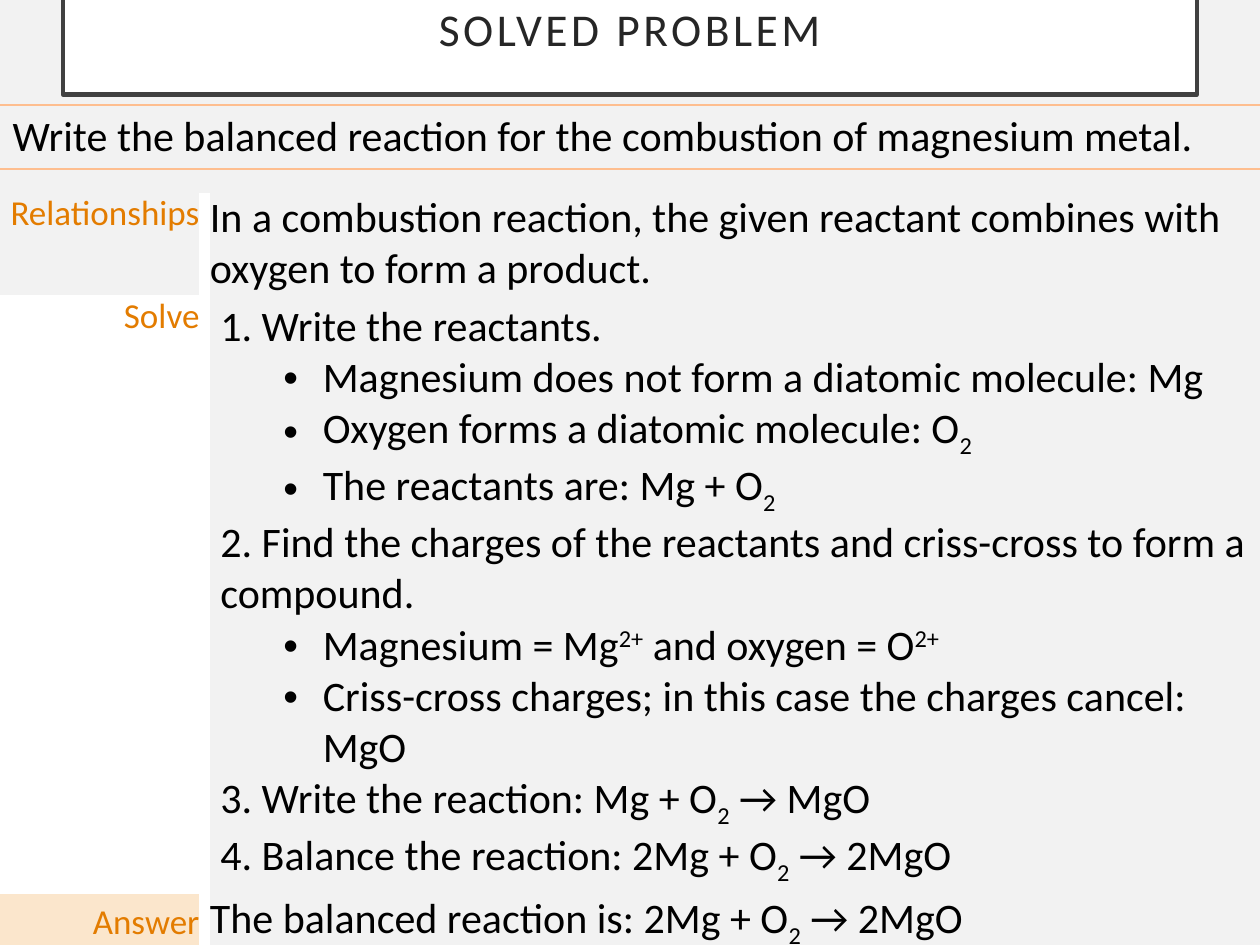
from dataclasses import dataclass
from typing import Optional

from lxml import etree
from pptx import Presentation
from pptx.dml.color import RGBColor
from pptx.enum.text import MSO_ANCHOR, PP_ALIGN
from pptx.oxml.ns import qn
from pptx.util import Pt

LEFT, CENTER, RIGHT = PP_ALIGN.LEFT, PP_ALIGN.CENTER, PP_ALIGN.RIGHT
TOP, MIDDLE = MSO_ANCHOR.TOP, MSO_ANCHOR.MIDDLE

BLACK = RGBColor(0x00, 0x00, 0x00)
WHITE = RGBColor(0xFF, 0xFF, 0xFF)
PALE_GRAY = RGBColor(0xF2, 0xF2, 0xF2)
TITLE_GRAY = RGBColor(0x26, 0x26, 0x26)
FRAME_GRAY = RGBColor(0x40, 0x40, 0x40)
ORANGE = RGBColor(0xE3, 0x7C, 0x00)
RULE_ORANGE = RGBColor(0xFE, 0xBE, 0x8F)
PEACH = RGBColor(0xFB, 0xE6, 0xCC)

FONT = "Calibri"
SUBSCRIPT, SUPERSCRIPT = -25000, 30000
NUMBER, BULLET = "number", "bullet"
NO_MARGINS = (0, 0, 0, 0)


@dataclass(frozen=True)
class Run:
    text: str
    baseline: int = 0


@dataclass(frozen=True)
class Line:
    runs: tuple
    marker: Optional[str] = None


@dataclass(frozen=True)
class Section:
    label: str
    lines: tuple
    height: float
    label_fill: Optional[RGBColor] = None
    margins: tuple = NO_MARGINS
    anchor: MSO_ANCHOR = TOP


SUB_TWO = Run("2", SUBSCRIPT)
SUPER_CHARGE = Run("2+", SUPERSCRIPT)


def line(*parts, marker=None) -> Line:
    runs = tuple(part if isinstance(part, Run) else Run(part) for part in parts)
    return Line(runs, marker)


STEPS = (
    line(" Write the reactants.", marker=NUMBER),
    line("Magnesium does not form a diatomic molecule: Mg", marker=BULLET),
    line("Oxygen forms a diatomic molecule: O", SUB_TWO, marker=BULLET),
    line("The reactants are: Mg + O", SUB_TWO, marker=BULLET),
    line(" Find the charges of the reactants and criss-cross to form a compound.", marker=NUMBER),
    line("Magnesium = Mg", SUPER_CHARGE, " and oxygen = O", SUPER_CHARGE, marker=BULLET),
    line("Criss-cross charges; in this case the charges cancel: MgO", marker=BULLET),
    line(" Write the reaction: Mg + O", SUB_TWO, " → MgO", marker=NUMBER),
    line(" Balance the reaction: 2Mg + O", SUB_TWO, " → 2MgO", marker=NUMBER),
)

SECTIONS = (
    Section("Relationships", (line(
        "In a combustion reaction, the given reactant combines with oxygen to form a product."),), 58),
    Section("Solve", STEPS, 337, WHITE, (6, 3.6, 7.2, 3.6)),
    Section("Answer", (line("The balanced reaction is: 2Mg + O", SUB_TWO, " → 2MgO"),),
            29, PEACH, anchor=MIDDLE),
)


def add_marker(paragraph, marker: str) -> None:
    properties = paragraph._p.get_or_add_pPr()
    if marker == NUMBER:
        properties.set("marL", "0")
        properties.set("indent", "0")
        etree.SubElement(properties, qn("a:buFont"), typeface="+mj-lt")
        etree.SubElement(properties, qn("a:buAutoNum"), type="arabicPeriod")
    else:
        paragraph.level = 1
        properties.set("marL", str(Pt(58.5)))
        properties.set("indent", str(-Pt(22.5)))
        etree.SubElement(properties, qn("a:buFont"), typeface="Arial")
        etree.SubElement(properties, qn("a:buChar"), char="•")


def write_text(frame, lines, *, size: float, color: RGBColor, align=LEFT, anchor=TOP,
               margins=NO_MARGINS, line_spacing: Optional[float] = None, tracking: float = 0) -> None:
    frame.word_wrap = True
    frame.vertical_anchor = anchor
    frame.margin_left, frame.margin_top, frame.margin_right, frame.margin_bottom = map(Pt, margins)
    for index, content in enumerate(lines):
        paragraph = frame.add_paragraph() if index else frame.paragraphs[0]
        paragraph.alignment = align
        if line_spacing:
            paragraph.line_spacing = line_spacing
        if content.marker:
            add_marker(paragraph, content.marker)
        for part in content.runs:
            run = paragraph.add_run()
            run.text = part.text
            run.font.name = FONT
            run.font.size = Pt(size)
            run.font.color.rgb = color
            properties = run._r.get_or_add_rPr()
            if part.baseline:
                properties.set("baseline", str(part.baseline))
            if tracking:
                properties.set("spc", str(int(tracking * 100)))


def style_cell(cell, fill: Optional[RGBColor] = None, rule: Optional[RGBColor] = None) -> None:
    if fill is None:
        cell.fill.background()
    else:
        cell.fill.solid()
        cell.fill.fore_color.rgb = fill
    properties = cell._tc.get_or_add_tcPr()
    for index, side in enumerate("LRTB"):
        border = etree.Element(qn(f"a:ln{side}"))
        if rule is not None and side in "TB":
            border.set("w", str(Pt(1.5)))
            solid = etree.SubElement(border, qn("a:solidFill"))
            etree.SubElement(solid, qn("a:srgbClr"), val=str(rule))
        else:
            etree.SubElement(border, qn("a:noFill"))
        properties.insert(index, border)


def add_plain_table(slide, top: float, widths, heights):
    frame = slide.shapes.add_table(len(heights), len(widths), Pt(0), Pt(top),
                                   Pt(sum(widths)), Pt(sum(heights)))
    table = frame.table
    table.first_row = False
    table.horz_banding = False
    for column, width in zip(table.columns, widths):
        column.width = Pt(width)
    for row, height in zip(table.rows, heights):
        row.height = Pt(height)
    return table


def add_title(slide) -> None:
    title = slide.shapes.title
    title.left, title.top, title.width, title.height = Pt(36), Pt(-18), Pt(648), Pt(72)
    title.fill.solid()
    title.fill.fore_color.rgb = WHITE
    title.line.color.rgb = FRAME_GRAY
    title.line.width = Pt(2.5)
    write_text(title.text_frame, [line("SOLVED PROBLEM")], size=26, color=TITLE_GRAY, align=CENTER,
               anchor=MIDDLE, margins=(14.4,) * 4, line_spacing=0.9, tracking=2)


def add_question(slide) -> None:
    cell = add_plain_table(slide, 60, [720], [36.5]).cell(0, 0)
    style_cell(cell, rule=RULE_ORANGE)
    write_text(cell.text_frame, [line("Write the balanced reaction for the combustion of magnesium metal.")],
               size=24, color=BLACK)
    cell.vertical_anchor = MIDDLE
    cell.margin_left = cell.margin_right = Pt(7.2)
    cell.margin_top = cell.margin_bottom = Pt(3.6)


def write_cell(cell, lines, *, margins=NO_MARGINS, anchor=TOP, **text_format) -> None:
    write_text(cell.text_frame, lines, **text_format)
    cell.vertical_anchor = anchor
    cell.margin_left, cell.margin_top, cell.margin_right, cell.margin_bottom = map(Pt, margins)


def add_solution(slide) -> None:
    table = add_plain_table(slide, 110, [114, 6, 600], [section.height for section in SECTIONS])
    for index, section in enumerate(SECTIONS):
        label, gap, body = (table.cell(index, column) for column in range(3))
        style_cell(label, section.label_fill)
        style_cell(gap, WHITE)
        style_cell(body)
        write_cell(label, [line(section.label)], size=20, color=ORANGE, align=RIGHT, anchor=section.anchor)
        write_cell(gap, [], size=20, color=BLACK)
        write_cell(body, section.lines, size=24, color=BLACK, anchor=section.anchor, margins=section.margins)


def main() -> None:
    presentation = Presentation()
    presentation.slide_width, presentation.slide_height = Pt(720), Pt(540)
    slide = presentation.slides.add_slide(presentation.slide_layouts[5])
    slide.background.fill.solid()
    slide.background.fill.fore_color.rgb = PALE_GRAY
    add_title(slide)
    add_question(slide)
    add_solution(slide)
    presentation.save("out.pptx")


if __name__ == "__main__":
    main()
